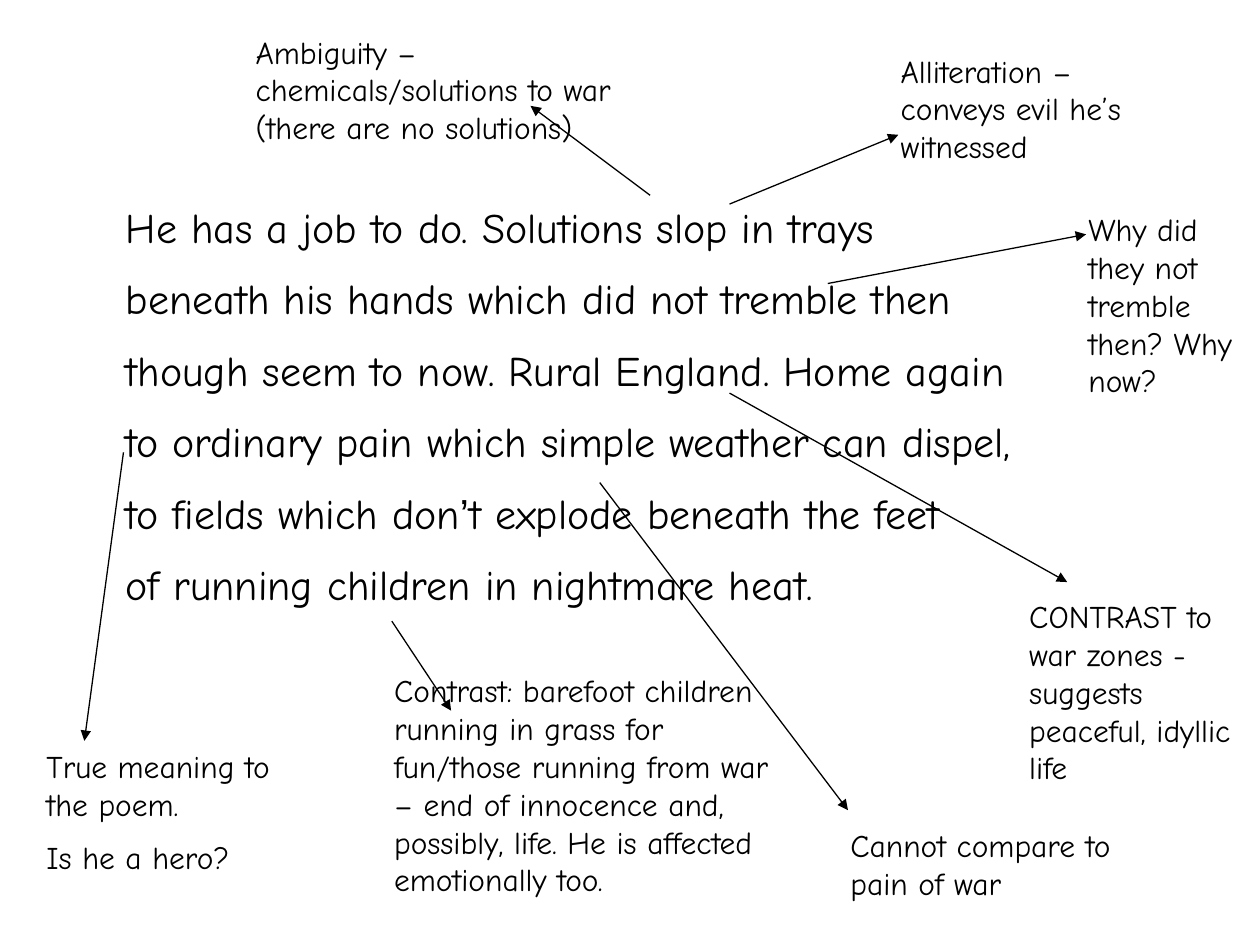
from dataclasses import dataclass

from lxml import etree
from pptx import Presentation
from pptx.dml.color import RGBColor
from pptx.enum.shapes import MSO_CONNECTOR
from pptx.enum.text import MSO_ANCHOR, MSO_AUTO_SIZE, PP_ALIGN
from pptx.oxml.ns import qn
from pptx.util import Inches, Pt

STRAIGHT = MSO_CONNECTOR.STRAIGHT
TOP = MSO_ANCHOR.TOP
LEFT = PP_ALIGN.LEFT
GROW = MSO_AUTO_SIZE.SHAPE_TO_FIT_TEXT

COLUMNS, ROWS = 100, 75
WIDTH, HEIGHT = Inches(10), Inches(7.5)


@dataclass(frozen=True)
class Theme:
    ink: RGBColor = RGBColor(0, 0, 0)
    font: str = "Comic Neue"
    apostrophe_font: str = "Arial"
    poem_size: int = 24
    note_size: int = 18
    line_width: float = 0.75


THEME = Theme()

POEM_BOX = (9, 15.5, 80.3, 35.3)
POEM = [
    ["He has a job to do. Solutions slop in trays"],
    ["beneath his hands which did not tremble then"],
    ["though seem to now. Rural England. Home again"],
    ["to ordinary pain which simple weather can dispel,"],
    ["to fields which don", "’", "t explode beneath the feet"],
    ["of running children in nightmare heat."],
]

ANNOTATIONS = [
    ((51.6, 15.5), (42.1, 8.4), (19.3, 2.1, 31.5, 10.1),
     [["Ambiguity – chemicals/solutions to war (there are no solutions)"]]),
    ((57.9, 16.2), (71.3, 10.7), (70.5, 3.6, 21.2, 10.1),
     [["Alliteration – conveys evil he’s witnessed"]]),
    ((65.7, 22.5), (86.2, 18.6), (85.4, 16.2, 14.6, 16),
     [["Why did they not tremble then? Why now?"]]),
    ((9.8, 35.9), (6.7, 58.8), (2.7, 58.8, 23.6, 11.6),
     [["True meaning to the poem."], ["Is he a hero?"]]),
    ((47.6, 38.3), (67.3, 64.3), (66.5, 65.1, 26.8, 7),
     [["Cannot compare to pain of war"]]),
    ((31.1, 49.3), (35.8, 56.4), (30.3, 52.8, 32.3, 22.2),
     [["Contrast: barefoot children running in grass for fun/those running "
       "from war – end of innocence and, possibly, life. He is affected "
       "emotionally too."]]),
    ((57.9, 31.2), (84.7, 46.2), (80.7, 46.9, 18.1, 16.2),
     [["CONTRAST to war zones - suggests peaceful, idyllic life"]]),
]


def col(n):
    return round(WIDTH * n / COLUMNS)


def row(n):
    return round(HEIGHT * n / ROWS)


def add_run(p, text, size):
    r = p.add_run()
    r.text = text
    r.font.name = THEME.apostrophe_font if text == "’" else THEME.font
    r.font.size = Pt(size)
    r.font.color.rgb = THEME.ink


def add_text(s, box, paragraphs, size):
    x, y, w, h = box
    sp = s.shapes.add_textbox(col(x), row(y), col(w), row(h))
    tf = sp.text_frame
    tf.word_wrap = True
    tf.auto_size = GROW
    tf.vertical_anchor = TOP
    for i, runs in enumerate(paragraphs):
        p = tf.paragraphs[0] if i == 0 else tf.add_paragraph()
        p.alignment = LEFT
        p.space_before = Pt(size / 2)
        for text in runs:
            add_run(p, text, size)


def add_arrow(s, start, end):
    (x1, y1), (x2, y2) = start, end
    sp = s.shapes.add_connector(STRAIGHT, col(x1), row(y1), col(x2), row(y2))
    sp.line.color.rgb = THEME.ink
    sp.line.width = Pt(THEME.line_width)
    etree.SubElement(sp.line._get_or_add_ln(), qn("a:tailEnd"), type="triangle")
    etree.SubElement(sp._element.spPr, qn("a:effectLst"))


def main():
    prs = Presentation()
    prs.slide_width, prs.slide_height = WIDTH, HEIGHT
    s = prs.slides.add_slide(prs.slide_layouts.get_by_name("Blank"))
    add_text(s, POEM_BOX, POEM, THEME.poem_size)
    for start, end, box, note in ANNOTATIONS:
        add_arrow(s, start, end)
        add_text(s, box, note, THEME.note_size)
    prs.save("out.pptx")


if __name__ == "__main__":
    main()
